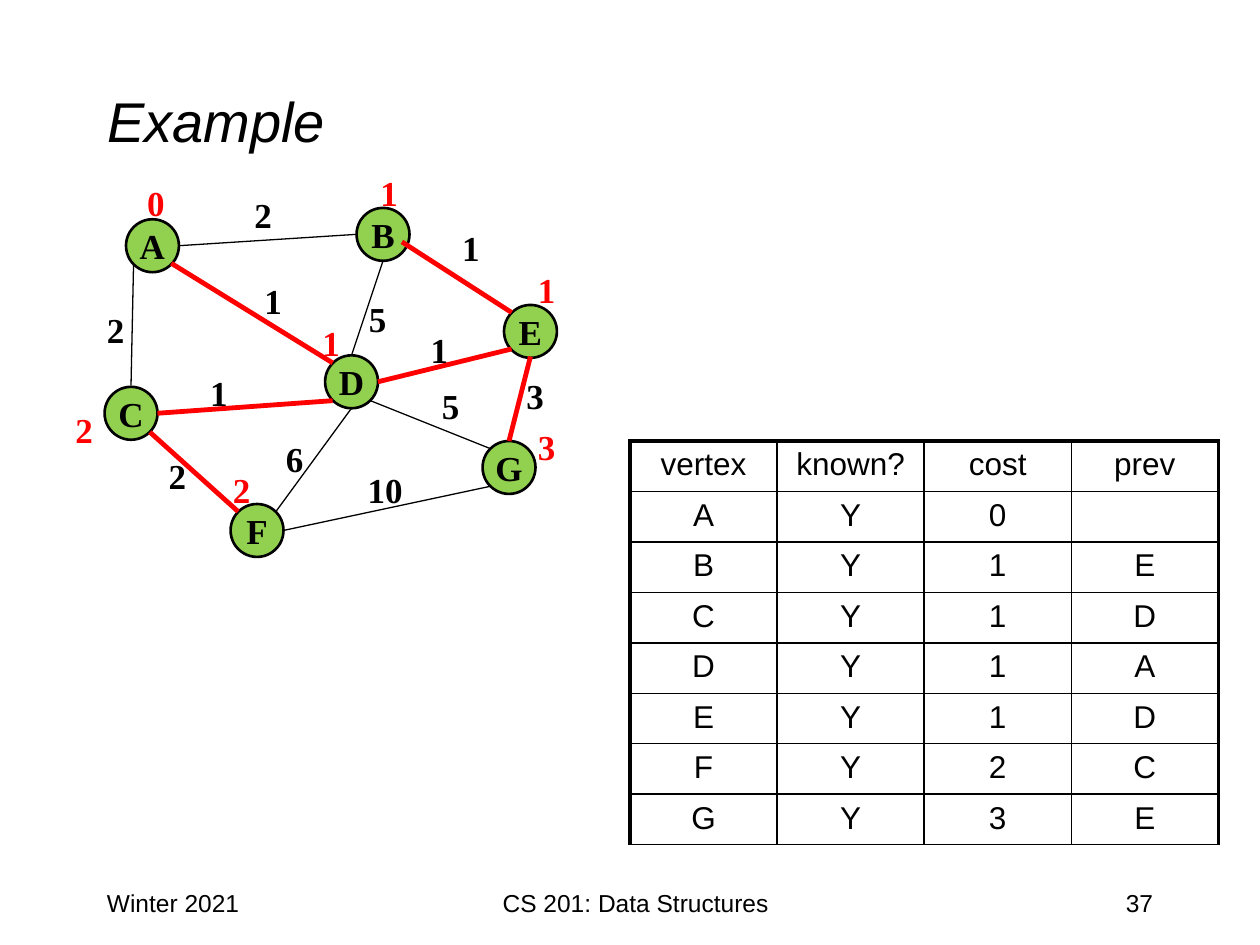
"""Build the slide of a weighted graph with its table of vertex costs."""
from typing import Any, NamedTuple

from lxml.etree import SubElement
from pptx import Presentation
from pptx.dml.color import RGBColor
from pptx.enum.shapes import MSO_CONNECTOR, MSO_SHAPE
from pptx.enum.text import MSO_ANCHOR, MSO_AUTO_SIZE, PP_ALIGN
from pptx.oxml.ns import qn
from pptx.util import Inches, Pt

BLACK = RGBColor(0x00, 0x00, 0x00)
RED = RGBColor(0xFF, 0x00, 0x00)
GREEN = RGBColor(0x92, 0xD0, 0x50)

TITLE = {"name": "Arial", "size": Pt(32), "bold": False, "italic": True}
FOOT = {"name": "Arial", "size": Pt(14)}
CELL = {"name": "Arial", "size": Pt(18), "bold": False}
MARK = {"name": "Times New Roman", "size": Pt(20), "bold": True}
PLAIN = {"first_row": False, "horz_banding": False}
SIZE = 0.42


class Node(NamedTuple):
    name: str
    left: float
    top: float


class Edge(NamedTuple):
    x1: float
    y1: float
    x2: float
    y2: float
    tree: bool = False


class Label(NamedTuple):
    text: str
    left: float
    top: float
    color: RGBColor = BLACK
    width: float = 0.34


class Foot(NamedTuple):
    text: str
    left: float
    width: float
    align: PP_ALIGN


NODES = [
    Node("A", 1, 1.74), Node("B", 2.83, 1.65), Node("C", 0.83, 3.07),
    Node("D", 2.58, 2.82), Node("F", 1.83, 4), Node("E", 4, 2.42),
    Node("G", 3.83, 3.5),
]
EDGES = [
    Edge(1.06, 2.1, 1.04, 3.06),
    Edge(2.83, 1.86, 1.42, 1.95),
    Edge(2.79, 2.82, 3.04, 2.07),
    Edge(2.79, 3.24, 2.19, 4.06),
    Edge(2.94, 3.18, 3.89, 3.56),
    Edge(2.25, 4.21, 3.89, 3.86),
    Edge(1.36, 2.09, 2.64, 2.88, True),
    Edge(1.25, 3.28, 2.64, 3.18, True),
    Edge(4.06, 2.77, 3, 3.03, True),
    Edge(1.19, 3.43, 1.89, 4.06, True),
    Edge(4.04, 3.5, 4.21, 2.83, True),
    Edge(3.19, 1.92, 4.06, 2.48, True),
]
COSTS = [
    Label("0", 1.07, 1.39, RED), Label("1", 2.92, 1.31, RED),
    Label("2", 1.75, 3.67, RED), Label("2", 0.5, 3.19, RED),
    Label("1", 2.46, 2.5, RED), Label("1", 4.17, 2.08, RED),
    Label("3", 4.17, 3.33, RED),
]
WEIGHTS = [
    Label("2", 1.92, 1.49), Label("1", 2, 2.17), Label("2", 0.75, 2.4),
    Label("5", 2.83, 2.31), Label("1", 1.57, 2.9), Label("1", 3.32, 2.56),
    Label("1", 3.57, 1.75), Label("2", 1.24, 3.56), Label("6", 2.17, 3.42),
    Label("5", 3.41, 3), Label("3", 4.08, 2.92),
    Label("10", 2.82, 3.67, BLACK, 0.48),
]
FEET = [
    Foot("Winter 2021", 0.75, 2.08, PP_ALIGN.LEFT),
    Foot("37", 7.17, 2.08, PP_ALIGN.RIGHT),
    Foot("CS 201: Data Structures", 3.17, 3.75, PP_ALIGN.CENTER),
]
ROWS = [
    ("vertex", "known?", "cost", "prev"),
    ("A", "Y", "0", ""),
    ("B", "Y", "1", "E"),
    ("C", "Y", "1", "D"),
    ("D", "Y", "1", "A"),
    ("E", "Y", "1", "D"),
    ("F", "Y", "2", "C"),
    ("G", "Y", "3", "E"),
]


def apply(item: Any, form: dict[str, Any]) -> None:
    for key, value in form.items():
        setattr(item, key, value)


def write(frame: Any, text: str, form: dict[str, Any], align: PP_ALIGN,
          color: RGBColor = BLACK) -> Any:
    frame.text = text
    para = frame.paragraphs[0]
    para.alignment = align
    apply(para.font, form)
    para.font.color.rgb = color
    return para


def draw_node(slide: Any, node: Node) -> None:
    disc = slide.shapes.add_shape(MSO_SHAPE.OVAL, Inches(node.left), Inches(node.top),
                                  Inches(SIZE), Inches(SIZE))
    disc.shadow.inherit = False
    disc.fill.solid()
    disc.fill.fore_color.rgb = GREEN
    disc.line.color.rgb = BLACK
    disc.line.width = Pt(1.5)
    apply(disc.text_frame, {"word_wrap": False, "vertical_anchor": MSO_ANCHOR.MIDDLE})
    write(disc.text_frame, node.name, MARK, PP_ALIGN.CENTER)


def draw_edge(slide: Any, edge: Edge) -> None:
    ends = [Inches(value) for value in edge[:4]]
    line = slide.shapes.add_connector(MSO_CONNECTOR.STRAIGHT, *ends)
    line.line.color.rgb = RED if edge.tree else BLACK
    line.line.width = Pt(2.75 if edge.tree else 0.75)
    SubElement(line._element.spPr, qn("a:effectLst"))


def draw_label(slide: Any, label: Label) -> None:
    box = slide.shapes.add_textbox(Inches(label.left), Inches(label.top),
                                   Inches(label.width), Inches(0.44))
    apply(box.text_frame, {"word_wrap": False, "auto_size": MSO_AUTO_SIZE.SHAPE_TO_FIT_TEXT})
    write(box.text_frame, label.text, MARK, PP_ALIGN.LEFT, label.color)


def draw_foot(slide: Any, foot: Foot) -> None:
    box = slide.shapes.add_textbox(Inches(foot.left), Inches(7),
                                   Inches(foot.width), Inches(0.5))
    box.text_frame.word_wrap = True
    write(box.text_frame, foot.text, FOOT, foot.align)


def add_border(cell: Any, side: str, width: float) -> None:
    line = SubElement(cell._tc.get_or_add_tcPr(), qn(f"a:ln{side}"), w=str(Pt(width)))
    fill = SubElement(line, qn("a:solidFill"))
    SubElement(fill, qn("a:srgbClr"), val=str(BLACK))


def draw_table(slide: Any) -> None:
    count = len(ROWS[0])
    table = slide.shapes.add_table(len(ROWS), count, Inches(5), Inches(3.5),
                                   Inches(4.67), Inches(0.4 * len(ROWS))).table
    apply(table, PLAIN)
    for row, words in enumerate(ROWS):
        for col, word in enumerate(words):
            cell = table.cell(row, col)
            outer = {"L": col == 0, "R": col == count - 1, "T": row == 0, "B": False}
            for side, thick in outer.items():
                add_border(cell, side, 2.25 if thick else 1)
            cell.fill.background()
            para = write(cell.text_frame, word, CELL, PP_ALIGN.CENTER)
            para.space_before = Pt(3.6)


def main() -> None:
    deck = Presentation()
    apply(deck, {"slide_width": Inches(10), "slide_height": Inches(7.5)})
    slide = deck.slides.add_slide(deck.slide_layouts[5])
    title = slide.shapes.title
    apply(title, {"left": Inches(0.75), "top": Inches(0.33),
                  "width": Inches(8.5), "height": Inches(1.25)})
    title.text_frame.vertical_anchor = MSO_ANCHOR.MIDDLE
    write(title.text_frame, "Example", TITLE, PP_ALIGN.LEFT)
    for foot in FEET:
        draw_foot(slide, foot)
    for node in NODES:
        draw_node(slide, node)
    for edge in EDGES:
        draw_edge(slide, edge)
    for label in COSTS + WEIGHTS:
        draw_label(slide, label)
    draw_table(slide)
    deck.save("out.pptx")


if __name__ == "__main__":
    main()
